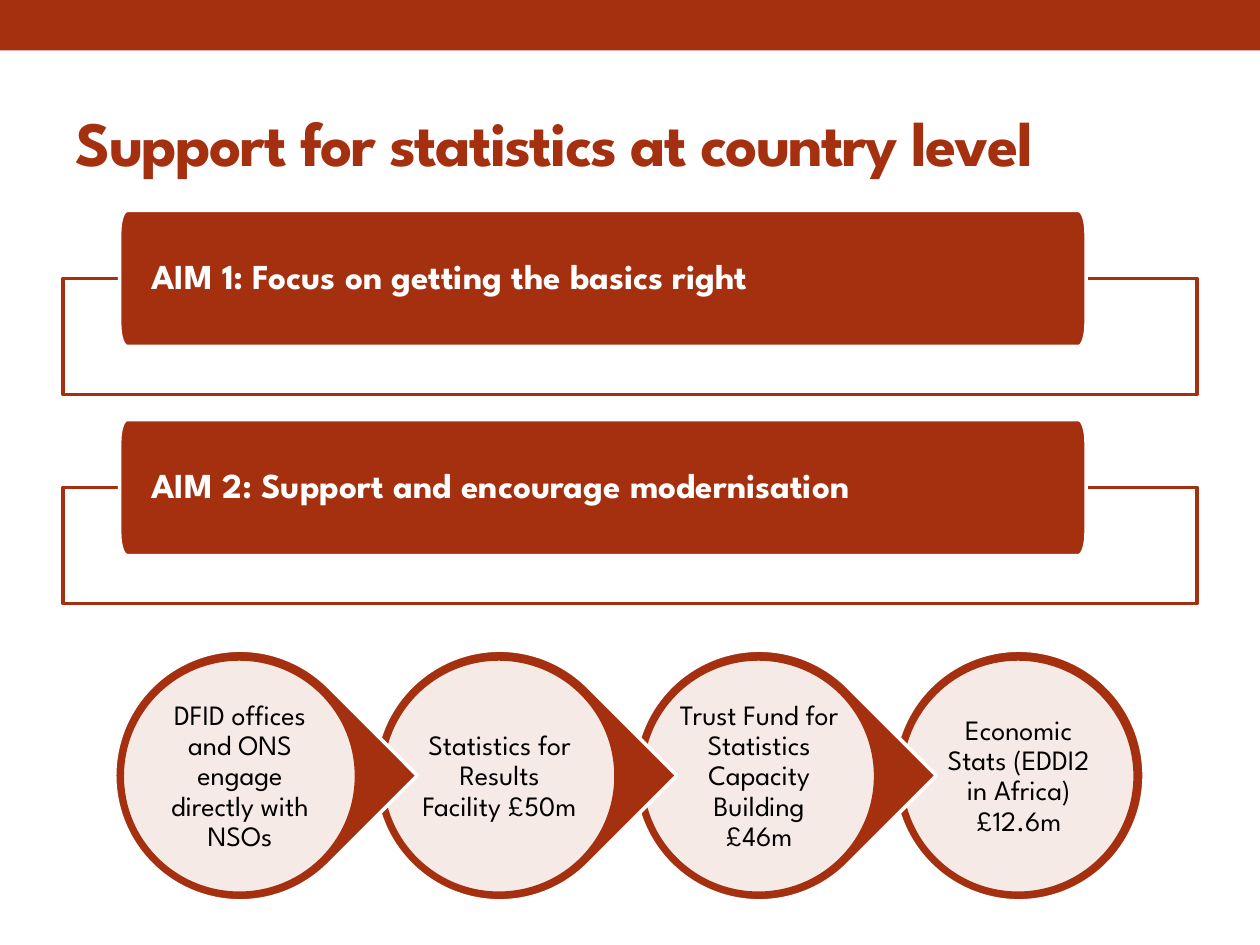
from math import cos, pi, sin

from lxml import etree
from pptx import Presentation
from pptx import util as u
from pptx.dml.color import RGBColor
from pptx.enum import shapes, text
from pptx.oxml import ns

RUST = RGBColor(0xA5, 0x30, 0x0F)
WHITE = RGBColor(0xFF, 0xFF, 0xFF)
BLACK = RGBColor(0x00, 0x00, 0x00)
FONT = "League Spartan"
LINE_WIDTH = u.Pt(2.08)

AIMS = [
    "AIM 1: Focus on getting the basics right",
    "AIM 2: Support and encourage modernisation",
]
PROGRAMMES = [
    "DFID offices and ONS engage directly with NSOs",
    "Statistics for Results Facility £50m",
    "Trust Fund for Statistics Capacity Building £46m",
    "Economic Stats (EDDI2 in Africa) £12.6m",
]


class SlidePainter:
    def __init__(self, deck):
        self.page = deck.slides.add_slide(deck.slide_layouts[5])

    def paint(self, shape, fill, line=None, opacity=None):
        shape.shadow.inherit = False
        shape.fill.solid()
        shape.fill.fore_color.rgb = fill
        if opacity:
            color = shape.element.spPr.find(ns.qn("a:solidFill")).find(ns.qn("a:srgbClr"))
            etree.SubElement(color, ns.qn("a:alpha"), val=str(opacity * 1000))
        if line is None:
            shape.line.fill.background()
        else:
            shape.line.color.rgb = line
            shape.line.width = LINE_WIDTH

    def preset(self, kind, left, top, width, height, fill, line=None, opacity=None):
        shape = self.page.shapes.add_shape(
            kind, u.Inches(left), u.Inches(top), u.Inches(width), u.Inches(height)
        )
        self.paint(shape, fill, line, opacity)
        return shape

    def label(self, box, words, size, color, align, bold=False, inset=(0.02, 0.02), spacing=0.9):
        frame = box.text_frame
        frame.word_wrap = True
        frame.vertical_anchor = text.MSO_ANCHOR.MIDDLE
        frame.margin_left = frame.margin_right = u.Inches(inset[0])
        frame.margin_top = frame.margin_bottom = u.Inches(inset[1])
        frame.text = words
        para = frame.paragraphs[0]
        para.alignment = align
        para.line_spacing = spacing
        para.font.name = FONT
        para.font.size = u.Pt(size)
        para.font.bold = bold
        para.font.color.rgb = color
        return para

    def title(self, words):
        box = self.page.shapes.title
        box.left, box.top = u.Inches(0.5), u.Inches(0.58)
        box.width, box.height = u.Inches(9), u.Inches(1.08)
        para = self.label(box, words, 36, RUST, text.PP_ALIGN.LEFT, True, (0.1, 0.05), 1.0)
        para.runs[0]._r.get_or_add_rPr().set("spc", "-100")

    def aim(self, top, words):
        self.preset(shapes.MSO_SHAPE.RECTANGLE, 0.5, top + 0.54, 9, 0.92, WHITE, RUST, 90)
        left, width, height = 0.95, 7.67, 1.08
        radius_x, radius_y, steps = 0.06, 0.18, 8
        right, bottom = left + width - radius_x, top + height - radius_y
        centres = [
            (right, bottom),
            (left + radius_x, bottom),
            (left + radius_x, top + radius_y),
            (right, top + radius_y),
        ]
        points = []
        for corner, (x, y) in enumerate(centres):
            for step in range(steps + 1):
                angle = (corner + step / steps) * pi / 2
                points.append(
                    (u.Inches(x + radius_x * cos(angle)), u.Inches(y + radius_y * sin(angle)))
                )
        builder = self.page.shapes.build_freeform(*points[0])
        builder.add_line_segments(points[1:], close=True)
        banner = builder.convert_to_shape()
        self.paint(banner, RUST, WHITE)
        self.label(banner, words, 20, WHITE, text.PP_ALIGN.LEFT, True, (0.25, 0.01))

    def programme(self, left, words, is_last):
        top = 5.16
        kind = shapes.MSO_SHAPE.OVAL if is_last else shapes.MSO_SHAPE.TEAR
        outer = self.preset(kind, left, top, 1.99, 1.99, RUST, WHITE)
        if not is_last:
            outer.rotation = 45
        self.preset(
            shapes.MSO_SHAPE.OVAL, left + 0.06, top + 0.07, 1.86, 1.86, WHITE, RUST, 90
        )
        box = self.page.shapes.add_textbox(
            u.Inches(left + 0.33), u.Inches(top + 0.34), u.Inches(1.33), u.Inches(1.33)
        )
        self.label(box, words, 16, BLACK, text.PP_ALIGN.CENTER)


def main():
    deck = Presentation()
    deck.slide_width, deck.slide_height = u.Inches(10), u.Inches(7.5)
    painter = SlidePainter(deck)
    painter.preset(shapes.MSO_SHAPE.RECTANGLE, 0, 0, 10, 0.4, RUST)
    painter.title("Support for statistics at country level")
    for row, words in enumerate(AIMS):
        painter.aim(1.67 + 1.66 * row, words)
    last = len(PROGRAMMES) - 1
    for column, words in reversed(list(enumerate(PROGRAMMES))):
        painter.programme(0.91 + 2.06 * column, words, column == last)
    deck.save("out.pptx")


if __name__ == "__main__":
    main()
